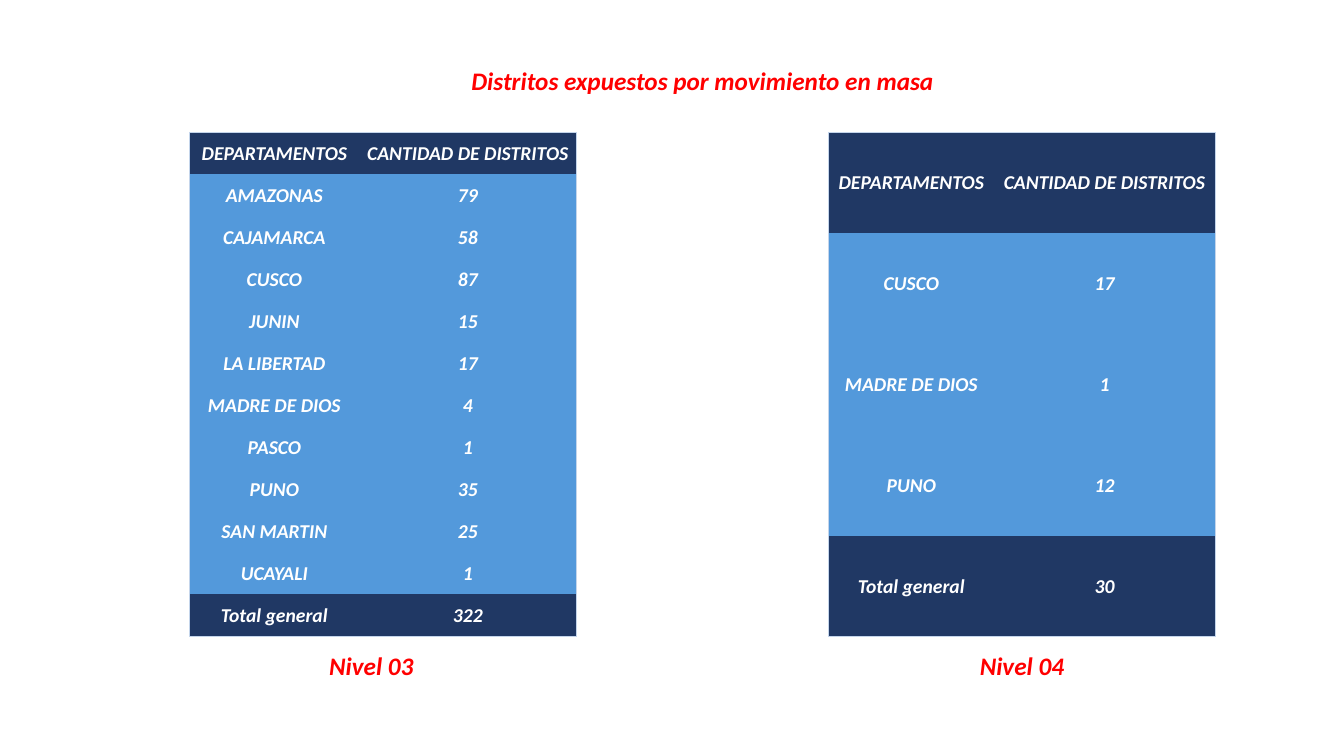
from lxml.etree import SubElement
from pptx import Presentation
from pptx.dml.color import RGBColor as Color
from pptx.enum.text import MSO_ANCHOR as Anchor, MSO_AUTO_SIZE as AutoSize, PP_ALIGN as Align
from pptx.oxml.ns import qn
from pptx.util import Pt

COLORS = {
    "caption": "FF0000",
    "text": "FFFFFF",
    "dark": "203864",
    "body": "5399DB",
    "border": "C4D5EB",
}
TABLE_TOP = 94.5
TABLE_HEIGHT = 360
HEADER = ("DEPARTAMENTOS", "CANTIDAD DE DISTRITOS")
LEVEL_3 = [
    ("AMAZONAS", 79),
    ("CAJAMARCA", 58),
    ("CUSCO", 87),
    ("JUNIN", 15),
    ("LA LIBERTAD", 17),
    ("MADRE DE DIOS", 4),
    ("PASCO", 1),
    ("PUNO", 35),
    ("SAN MARTIN", 25),
    ("UCAYALI", 1),
]
LEVEL_4 = [("CUSCO", 17), ("MADRE DE DIOS", 1), ("PUNO", 12)]


def write(frame, text, size, color):
    para = frame.paragraphs[0]
    para.alignment = Align.CENTER
    span = para.add_run()
    span.text = text
    font = span.font
    font.name = "Calibri"
    font.size = Pt(size)
    font.bold = font.italic = True
    font.color.rgb = Color.from_string(COLORS[color])


def add_caption(page, text, left, top, width):
    box = page.shapes.add_textbox(Pt(left), Pt(top), Pt(width), Pt(29))
    frame = box.text_frame
    frame.word_wrap = False
    frame.auto_size = AutoSize.SHAPE_TO_FIT_TEXT
    write(frame, text, 18, "caption")


def set_borders(cell, outer_sides):
    properties = cell._tc.get_or_add_tcPr()
    for side, outer in outer_sides.items():
        line = SubElement(properties, qn(f"a:ln{side}"), w=str(Pt(0.5)))
        if outer:
            fill = SubElement(line, qn("a:solidFill"))
            SubElement(fill, qn("a:srgbClr"), val=COLORS["border"])
        else:
            SubElement(line, qn("a:noFill"))


def style_cell(cell, text, fill):
    cell.margin_left = cell.margin_right = cell.margin_top = Pt(0.7)
    cell.margin_bottom = 0
    cell.vertical_anchor = Anchor.MIDDLE
    cell.fill.solid()
    cell.fill.fore_color.rgb = Color.from_string(COLORS[fill])
    write(cell.text_frame, text, 14, "text")


def add_district_table(page, left, widths, districts):
    total = sum(count for _, count in districts)
    rows = [HEADER, *districts, ("Total general", total)]
    last = len(rows) - 1
    table = page.shapes.add_table(
        len(rows), 2, Pt(left), Pt(TABLE_TOP), Pt(sum(widths)), Pt(TABLE_HEIGHT)
    ).table
    table.first_row = table.horz_banding = False
    for column, width in zip(table.columns, widths):
        column.width = Pt(width)
    for r, values in enumerate(rows):
        table.rows[r].height = Pt(TABLE_HEIGHT / len(rows))
        for c, value in enumerate(values):
            cell = table.cell(r, c)
            set_borders(cell, {"L": c == 0, "R": c == 1, "T": r == 0, "B": r == last})
            style_cell(cell, str(value), "dark" if r in (0, last) else "body")


def main():
    deck = Presentation()
    deck.slide_width, deck.slide_height = Pt(960), Pt(540)
    page = deck.slides.add_slide(deck.slide_layouts[6])
    add_caption(page, "Distritos expuestos por movimiento en masa", 327.6, 43.2, 348.5)
    add_caption(page, "Nivel 03", 226.8, 460.8, 77)
    add_caption(page, "Nivel 04", 689, 460.8, 82)
    add_district_table(page, 135.5, (121, 155.5), LEVEL_3)
    add_district_table(page, 592, (118, 158), LEVEL_4)
    deck.save("out.pptx")


if __name__ == "__main__":
    main()
